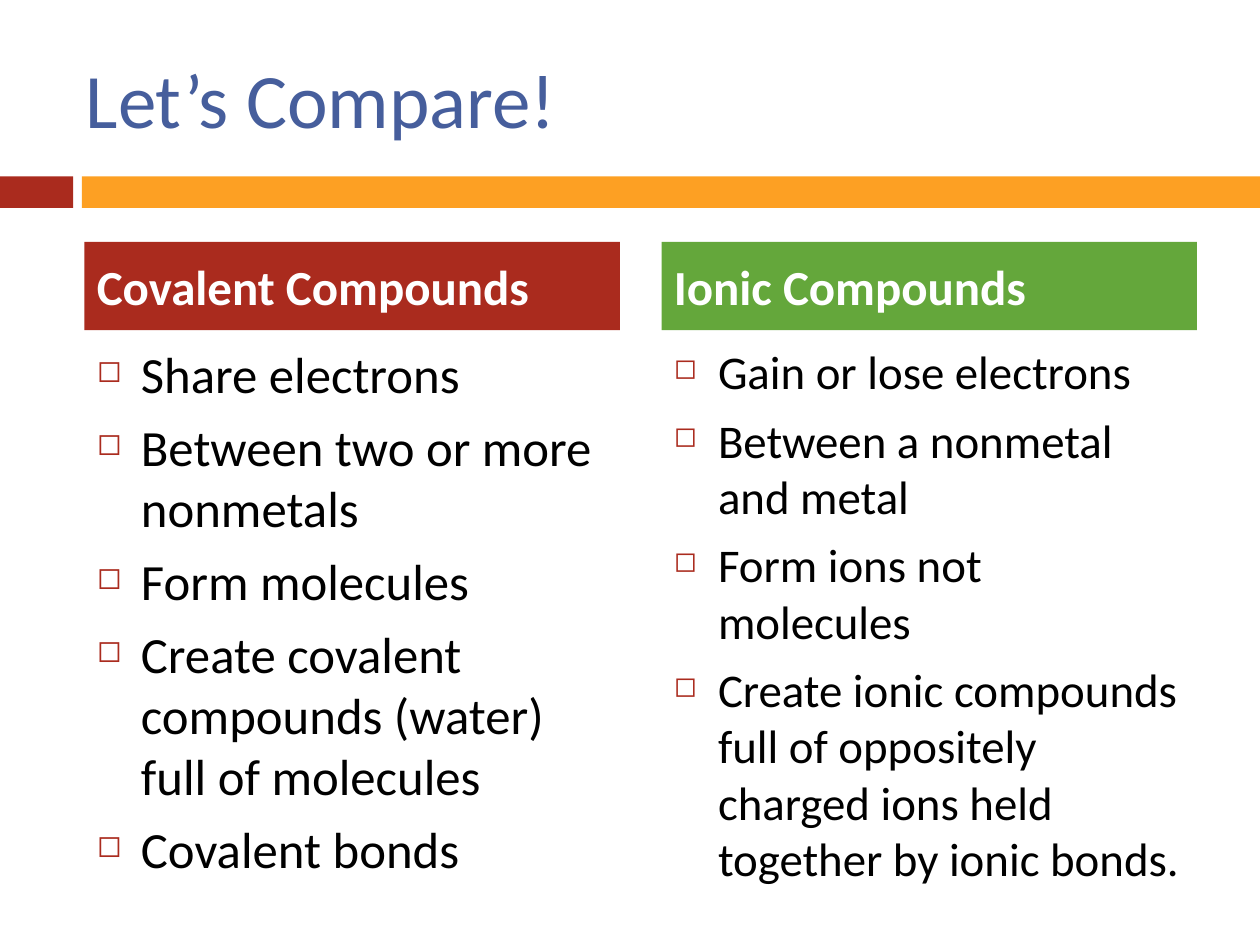
from dataclasses import dataclass

from lxml import etree
from pptx import Presentation
from pptx.dml.color import RGBColor
from pptx.enum.shapes import MSO_SHAPE
from pptx.enum.text import MSO_ANCHOR, PP_ALIGN
from pptx.oxml.ns import qn
from pptx.util import Inches, Pt

RECT = MSO_SHAPE.RECTANGLE
MIDDLE, TOP = MSO_ANCHOR.MIDDLE, MSO_ANCHOR.TOP
LEFT = PP_ALIGN.LEFT
TITLE_ONLY = 5


@dataclass(frozen=True)
class Theme:
    font: str = "Calibri"
    title: str = "465E9C"
    red: str = "AA2B1E"
    orange: str = "FDA023"
    green: str = "64A73B"
    text: str = "000000"
    white: str = "FFFFFF"
    title_size: float = 44
    head_size: float = 28
    space: float = 7
    bullet_scale: int = 60


THEME = Theme()
COLUMNS = [
    ("Covalent Compounds", THEME.red, 29, [
        "Share electrons",
        "Between two or more nonmetals",
        "Form molecules",
        "Create covalent compounds (water) full of molecules",
        "Covalent bonds",
    ]),
    ("Ionic Compounds", THEME.green, 26.8, [
        "Gain or lose electrons",
        "Between a nonmetal and metal",
        "Form ions not molecules",
        "Create ionic compounds full of oppositely charged ions held together by ionic bonds.",
    ]),
]


def add_rect(slide, box, color):
    s = slide.shapes.add_shape(RECT, *map(Inches, box))
    s.shadow.inherit = False
    s.fill.solid()
    s.fill.fore_color.rgb = RGBColor.from_string(color)
    s.line.fill.background()
    return s


def add_run(p, text, size, color, bold=False):
    p.alignment = LEFT
    r = p.add_run()
    r.text = text
    r.font.name = THEME.font
    r.font.size = Pt(size)
    r.font.bold = bold
    r.font.color.rgb = RGBColor.from_string(color)


def set_bullet(p):
    pPr = p._p.get_or_add_pPr()
    pPr.set("marL", str(Inches(0.35)))
    pPr.set("indent", str(-Inches(0.35)))
    color = etree.SubElement(pPr, qn("a:buClr"))
    etree.SubElement(color, qn("a:srgbClr"), val=THEME.red)
    etree.SubElement(pPr, qn("a:buSzPct"), val=str(THEME.bullet_scale * 1000))
    etree.SubElement(pPr, qn("a:buChar"), char="◻")


def place_title(slide, box, text):
    s = slide.shapes.title
    s.left, s.top, s.width, s.height = map(Inches, box)
    tf = s.text_frame
    tf.vertical_anchor = MIDDLE
    add_run(tf.paragraphs[0], text, THEME.title_size, THEME.title)


def add_band(slide, box):
    left, top, width, height = box
    tab, gap = 0.58, 0.07
    add_rect(slide, (left, top, tab, height), THEME.red)
    start = tab + gap
    add_rect(slide, (left + start, top, width - start, height), THEME.orange)


def add_column(slide, box, heading, color, size, items):
    left, top, width, height = box
    head_height, gap = 0.7, 0.05
    s = add_rect(slide, (left, top, width, head_height), color)
    tf = s.text_frame
    tf.word_wrap = True
    tf.vertical_anchor = MIDDLE
    p = tf.paragraphs[0]
    p.space_before = Pt(THEME.space)
    add_run(p, heading, THEME.head_size, THEME.white, bold=True)

    offset = head_height + gap
    body = (left, top + offset, width, height - offset)
    tf = slide.shapes.add_textbox(*map(Inches, body)).text_frame
    tf.word_wrap = True
    tf.vertical_anchor = TOP
    for i, item in enumerate(items):
        p = tf.add_paragraph() if i else tf.paragraphs[0]
        p.space_before = Pt(THEME.space)
        set_bullet(p)
        add_run(p, item, size, THEME.text)


def add_comparison(slide, box, columns):
    left, top, width, height = box
    gap = 0.33
    col_width = (width - gap * (len(columns) - 1)) / len(columns)
    for i, column in enumerate(columns):
        x = left + i * (col_width + gap)
        add_column(slide, (x, top, col_width, height), *column)


def main():
    prs = Presentation()
    prs.slide_width, prs.slide_height = Inches(10), Inches(7.5)
    slide = prs.slides.add_slide(prs.slide_layouts[TITLE_ONLY])
    add_band(slide, (0, 1.4, 10, 0.25))
    place_title(slide, (0.58, 0.3, 8.92, 0.95), "Let’s Compare!")
    add_comparison(slide, (0.67, 1.92, 8.83, 5.33), COLUMNS)
    prs.save("out.pptx")


if __name__ == "__main__":
    main()
